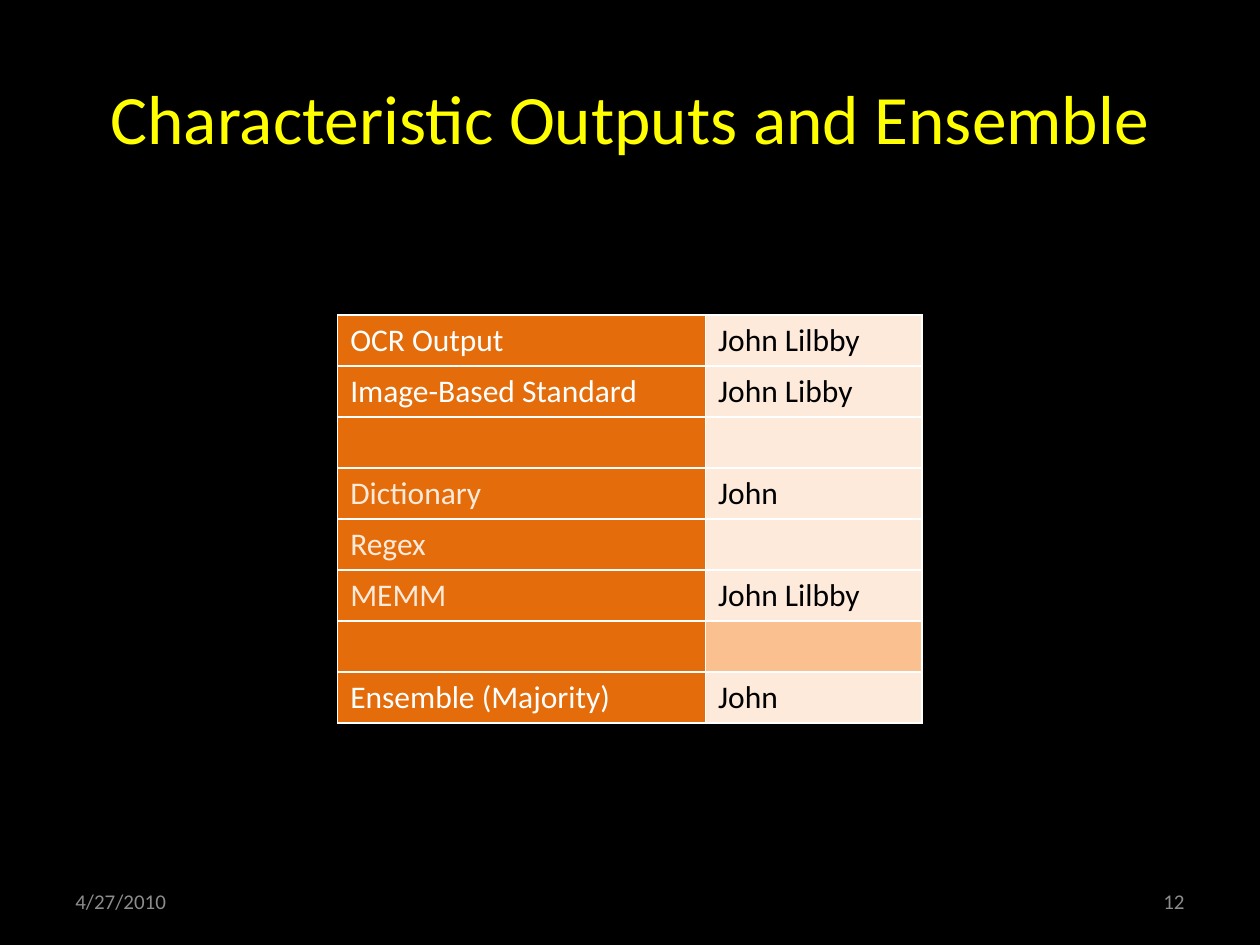
from dataclasses import dataclass

from lxml import etree
from pptx import Presentation
from pptx.dml.color import RGBColor
from pptx.enum.text import MSO_ANCHOR, PP_ALIGN
from pptx.oxml.ns import qn
from pptx.util import Inches, Pt

LEFT, CENTER, RIGHT = PP_ALIGN.LEFT, PP_ALIGN.CENTER, PP_ALIGN.RIGHT
MIDDLE = MSO_ANCHOR.MIDDLE


@dataclass(frozen=True)
class Theme:
    font: str = "Calibri"
    background: str = "000000"
    title: str = "FFFF00"
    footer: str = "8C8C8C"
    label_fill: str = "E46C0A"
    value_fill: str = "FDEADA"
    gap_fill: str = "FAC090"
    white: str = "FFFFFF"
    black: str = "000000"
    title_size: float = 39.6
    table_size: float = 18
    footer_size: float = 12


theme = Theme()


def write_text(text_frame, text, *, size, color, align=LEFT):
    paragraph = text_frame.paragraphs[0]
    paragraph.alignment = align
    run = paragraph.add_run()
    run.text = text
    run.font.name = theme.font
    run.font.size = Pt(size)
    run.font.color.rgb = RGBColor.from_string(color)


def style_cell(cell, fill):
    properties = cell._tc.get_or_add_tcPr()
    for side in ("lnL", "lnR", "lnT", "lnB"):
        border = etree.SubElement(properties, qn(f"a:{side}"), w=str(Pt(1)))
        solid = etree.SubElement(border, qn("a:solidFill"))
        etree.SubElement(solid, qn("a:srgbClr"), val=theme.white)
    cell.fill.solid()
    cell.fill.fore_color.rgb = RGBColor.from_string(fill)


presentation = Presentation()
presentation.slide_width = Inches(10)
presentation.slide_height = Inches(7.5)
slide = presentation.slides.add_slide(presentation.slide_layouts[6])
slide.background.fill.solid()
slide.background.fill.fore_color.rgb = RGBColor.from_string(theme.background)

text_boxes = [
    ("Characteristic Outputs and Ensemble", (0.5, 0.3, 9, 1.25), theme.title_size, theme.title, CENTER),
    ("12", (7.17, 6.95, 2.33, 0.4), theme.footer_size, theme.footer, RIGHT),
    ("4/27/2010", (0.5, 6.95, 2.33, 0.4), theme.footer_size, theme.footer, LEFT),
]
for text, position, size, color, align in text_boxes:
    text_frame = slide.shapes.add_textbox(*map(Inches, position)).text_frame
    text_frame.word_wrap = True
    text_frame.vertical_anchor = MIDDLE
    write_text(text_frame, text, size=size, color=color, align=align)

output_rows = [
    ("OCR Output", "John Lilbby", theme.white, theme.value_fill),
    ("Image-Based Standard", "John Libby", theme.white, theme.value_fill),
    ("", "", theme.white, theme.value_fill),
    ("Dictionary", "John", theme.value_fill, theme.value_fill),
    ("Regex", "", theme.value_fill, theme.value_fill),
    ("MEMM", "John Lilbby", theme.value_fill, theme.value_fill),
    ("", "", theme.white, theme.gap_fill),
    ("Ensemble (Majority)", "John", theme.white, theme.value_fill),
]
table = slide.shapes.add_table(
    len(output_rows), 2, Inches(2.68), Inches(2.5), Inches(4.64), Inches(3.24)
).table
table.first_row = False
table.horz_banding = False
table.columns[0].width = Inches(2.92)
table.columns[1].width = Inches(1.72)

for row, (label, value, label_color, value_fill) in enumerate(output_rows):
    cells = [
        (label, label_color, theme.label_fill),
        (value, theme.black, value_fill),
    ]
    for column, (text, color, fill) in enumerate(cells):
        cell = table.cell(row, column)
        style_cell(cell, fill)
        if text:
            write_text(cell.text_frame, text, size=theme.table_size, color=color)

presentation.save("out.pptx")
